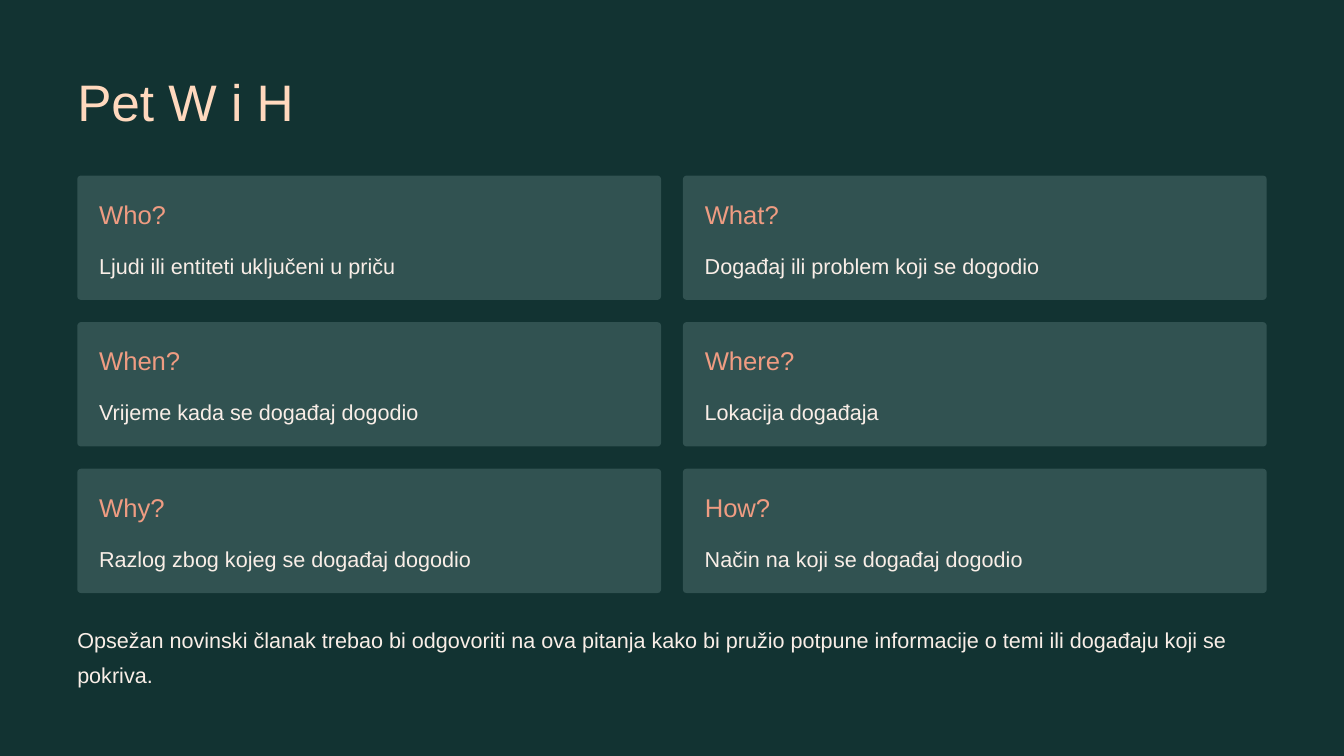
from pptx import Presentation
from pptx.dml.color import RGBColor
from pptx.enum.shapes import MSO_SHAPE
from pptx.util import Inches, Pt

COLORS = {
    "background": "123332",
    "card": "315251",
    "title": "FFD9BE",
    "heading": "EF9C82",
    "body": "F9EEE7",
}
STYLES = {
    "title": {"size": 44, "spacing": 55},
    "heading": {"size": 22, "spacing": 27.5},
    "body": {"size": 18.5, "spacing": 30},
}
QUESTIONS = [
    ("Who?", "Ljudi ili entiteti uključeni u priču"),
    ("What?", "Događaj ili problem koji se dogodio"),
    ("When?", "Vrijeme kada se događaj dogodio"),
    ("Where?", "Lokacija događaja"),
    ("Why?", "Razlog zbog kojeg se događaj dogodio"),
    ("How?", "Način na koji se događaj dogodio"),
]
SUMMARY = (
    "Opsežan novinski članak trebao bi odgovoriti na ova pitanja kako bi pružio "
    "potpune informacije o temi ili događaju koji se pokriva."
)
LEFT, TOP = 0.92, 2.09
CARD_W, CARD_H = 6.95, 1.48
GAP = 0.26
COLUMN_STEP = CARD_W + GAP
ROW_STEP = 3.49 / 2


class SlideBuilder:
    font = "Arial"

    def __init__(self, prs):
        self.s = prs.slides.add_slide(prs.slide_layouts[6])

    def color(self, name):
        return RGBColor.from_string(COLORS[name])

    def background(self):
        fill = self.s.background.fill
        fill.solid()
        fill.fore_color.rgb = self.color("background")

    def text(self, text, style, x, y, w, h, wrap=False):
        sp = self.s.shapes.add_textbox(Inches(x), Inches(y), Inches(w), Inches(h))
        tf = sp.text_frame
        frame = {"margin_left": 0, "margin_top": 0, "margin_right": 0,
                 "margin_bottom": 0, "word_wrap": wrap}
        for name, value in frame.items():
            setattr(tf, name, value)
        p = tf.paragraphs[0]
        p.line_spacing = Pt(STYLES[style]["spacing"])
        r = p.add_run()
        r.text = text
        for name, value in {"name": self.font, "size": Pt(STYLES[style]["size"])}.items():
            setattr(r.font, name, value)
        r.font.color.rgb = self.color(style)

    def panel(self, x, y, w, h):
        sp = self.s.shapes.add_shape(
            MSO_SHAPE.ROUNDED_RECTANGLE, Inches(x), Inches(y), Inches(w), Inches(h))
        sp.adjustments[0] = 0.03
        sp.shadow.inherit = False
        sp.fill.solid()
        sp.fill.fore_color.rgb = self.color("card")
        sp.line.fill.background()

    def card(self, x, y, heading, body):
        self.panel(x, y, CARD_W, CARD_H)
        self.text(heading, "heading", x + GAP, y + 0.26, 3.08, 0.38)
        self.text(body, "body", x + GAP, y + 0.81, 6.43, 0.42)


def main():
    prs = Presentation()
    prs.slide_width, prs.slide_height = Inches(16), Inches(9)
    slide = SlideBuilder(prs)
    slide.background()
    slide.text("Pet W i H", "title", LEFT, 0.8, 6.16, 0.77)
    for i, (heading, body) in enumerate(QUESTIONS):
        row, column = divmod(i, 2)
        slide.card(LEFT + column * COLUMN_STEP, TOP + row * ROW_STEP, heading, body)
    slide.text(SUMMARY, "body", LEFT, 7.36, 14.17, 0.84, wrap=True)
    prs.save("out.pptx")


if __name__ == "__main__":
    main()
